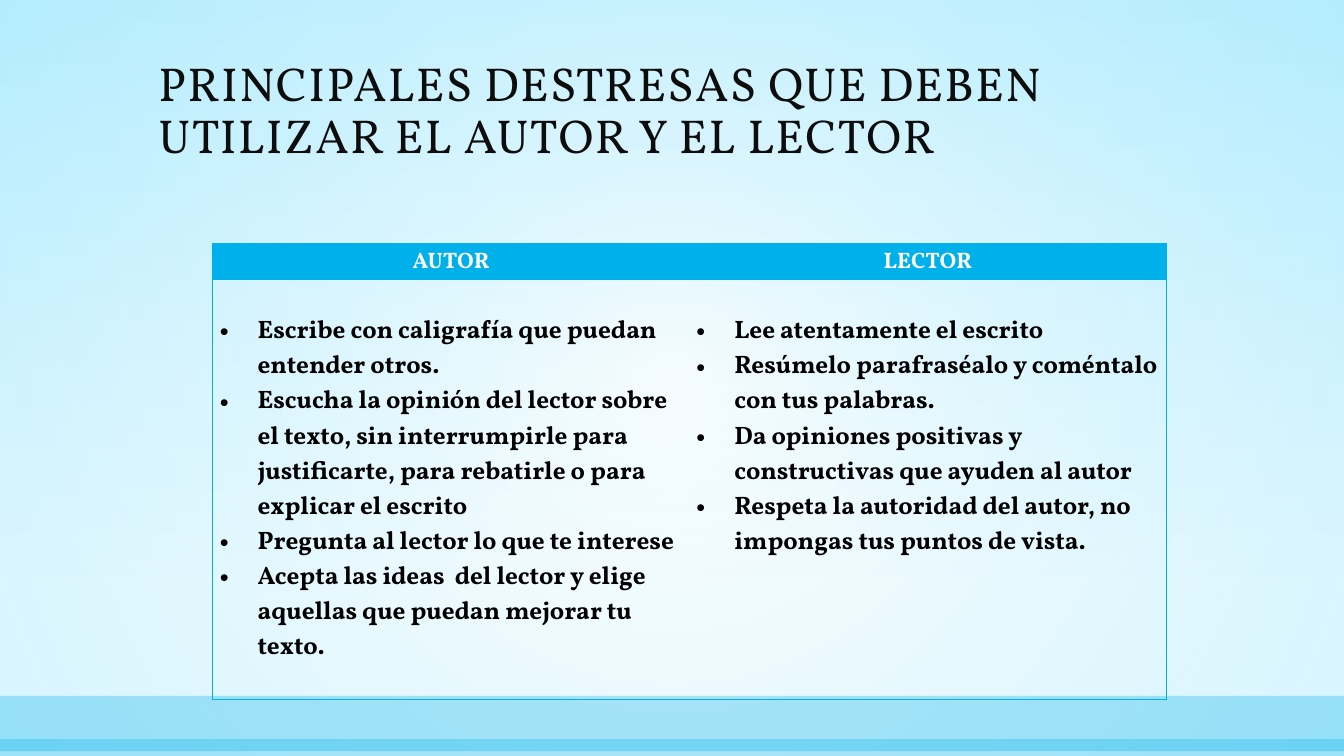
from lxml.etree import SubElement
from pptx import Presentation
from pptx.dml.color import RGBColor
from pptx.enum.shapes import MSO_SHAPE
from pptx.enum.text import MSO_ANCHOR, PP_ALIGN
from pptx.oxml import parse_xml
from pptx.oxml.ns import nsdecls, qn
from pptx.util import Pt

COLORS = {"accent": "00B0EA", "sky": "C8F1FF", "glow": "91E4FF",
          "white": "FFFFFF", "title": "0D0D0D", "body": "000000"}
FONT = "Vollkorn"
SKILLS = {
    "AUTOR": [
        "Escribe con caligrafía que puedan entender otros.",
        "Escucha la opinión del lector sobre el texto, sin interrumpirle para "
        "justificarte, para rebatirle o para explicar el escrito",
        "Pregunta al lector lo que te interese",
        "Acepta las ideas  del lector y elige aquellas que puedan mejorar tu texto.",
    ],
    "LECTOR": [
        "Lee atentamente el escrito",
        "Resúmelo parafraséalo y coméntalo con tus palabras.",
        "Da opiniones positivas y constructivas que ayuden al autor",
        "Respeta la autoridad del autor, no impongas tus puntos de vista.",
    ],
}


def style(paragraph, size, color, bold=False):
    for run in paragraph.runs:
        run.font.name = FONT
        run.font.size = Pt(size)
        run.font.bold = bold
        run.font.color.rgb = RGBColor.from_string(COLORS[color])


def add_band(top, height):
    band = slide.shapes.add_shape(MSO_SHAPE.RECTANGLE, 0, Pt(top), prs.slide_width, Pt(height))
    band.shadow.inherit = False
    band.line.fill.background()
    band.fill.solid()
    band.fill.fore_color.rgb = RGBColor.from_string(COLORS["accent"])
    return band


prs = Presentation()
prs.slide_width, prs.slide_height = Pt(960), Pt(540)
slide = prs.slides.add_slide(prs.slide_layouts[5])

# Background: sky fading to white downwards
sky = slide.background.fill
sky.gradient()
sky.gradient_angle = 270
for stop, color, position in zip(sky.gradient_stops, ("sky", "white"), (0, 0.79)):
    stop.color.rgb = RGBColor.from_string(COLORS[color])
    stop.position = position

# Radial glow over the whole slide
glow = add_band(0, 540)
properties = glow._element.spPr
properties.replace(properties.find(qn("a:solidFill")), parse_xml(
    f'<a:gradFill {nsdecls("a")} rotWithShape="1"><a:gsLst>'
    f'<a:gs pos="0"><a:srgbClr val="{COLORS["white"]}"><a:alpha val="49000"/></a:srgbClr></a:gs>'
    f'<a:gs pos="100000"><a:srgbClr val="{COLORS["glow"]}"><a:alpha val="35000"/></a:srgbClr></a:gs>'
    '</a:gsLst><a:path path="circle">'
    '<a:fillToRect l="50000" t="50000" r="50000" b="50000"/></a:path></a:gradFill>'))

# Translucent bands at the foot
for top, height, alpha in ((497, 39.5, 30), (528, 12, 28)):
    foot = add_band(top, height)
    foot_color = foot._element.spPr.find(qn("a:solidFill"))[0]
    SubElement(foot_color, qn("a:alpha"), val=str(alpha * 1000))

# Title, brought in front of the background shapes
title = slide.shapes.title
slide.shapes._spTree.append(title._element)
title.left, title.top, title.width, title.height = Pt(106), Pt(34.5), Pt(749), Pt(86)
title.text_frame.text = "PRINCIPALES DESTRESAS QUE DEBEN UTILIZAR EL AUTOR Y EL LECTOR"
title.text_frame.word_wrap = True
title.text_frame.vertical_anchor = MSO_ANCHOR.BOTTOM
heading = title.text_frame.paragraphs[0]
heading.alignment = PP_ALIGN.LEFT
heading.line_spacing = 0.9
style(heading, 34, "title")
heading.runs[0].font._element.set("spc", "100")

# Table of skills
skills = slide.shapes.add_table(2, 2, Pt(152), Pt(173.5), Pt(681), Pt(326.3)).table
skills.horz_banding = False
skills.rows[0].height, skills.rows[1].height = Pt(26.3), Pt(300)

for column, (role, advice) in enumerate(SKILLS.items()):
    header, body = skills.cell(0, column), skills.cell(1, column)

    header.text_frame.text = role
    role_line = header.text_frame.paragraphs[0]
    role_line.alignment = PP_ALIGN.CENTER
    role_line.line_spacing = 1.15
    style(role_line, 16, "white", bold=True)

    body.text_frame.text = "\n".join(advice)
    for item in body.text_frame.paragraphs:
        style(item, 18, "body", bold=True)
        indent = item._p.get_or_add_pPr()
        indent.set("marL", str(Pt(27)))
        indent.set("indent", str(-Pt(27)))
        SubElement(indent, qn("a:buFont"), typeface="Arial")
        SubElement(indent, qn("a:buChar"), char="•")

    # Margins, outer borders and fills
    outer = "lnL" if column == 0 else "lnR"
    for cell, edges in ((header, (outer, "lnT")), (body, (outer, "lnT", "lnB"))):
        cell.margin_left = cell.margin_right = Pt(5)
        cell.margin_top = Pt(25 if cell is body else 0)
        cell.margin_bottom = 0
        cell.vertical_anchor = MSO_ANCHOR.TOP
        for edge in ("lnL", "lnR", "lnT", "lnB"):
            border = SubElement(cell._tc.get_or_add_tcPr(), qn(f"a:{edge}"), w=str(Pt(0.5)))
            if edge in edges:
                paint = SubElement(border, qn("a:solidFill"))
                SubElement(paint, qn("a:srgbClr"), val=COLORS["accent"])
            else:
                SubElement(border, qn("a:noFill"))
    header.fill.solid()
    header.fill.fore_color.rgb = RGBColor.from_string(COLORS["accent"])
    body.fill.background()

prs.save("out.pptx")
